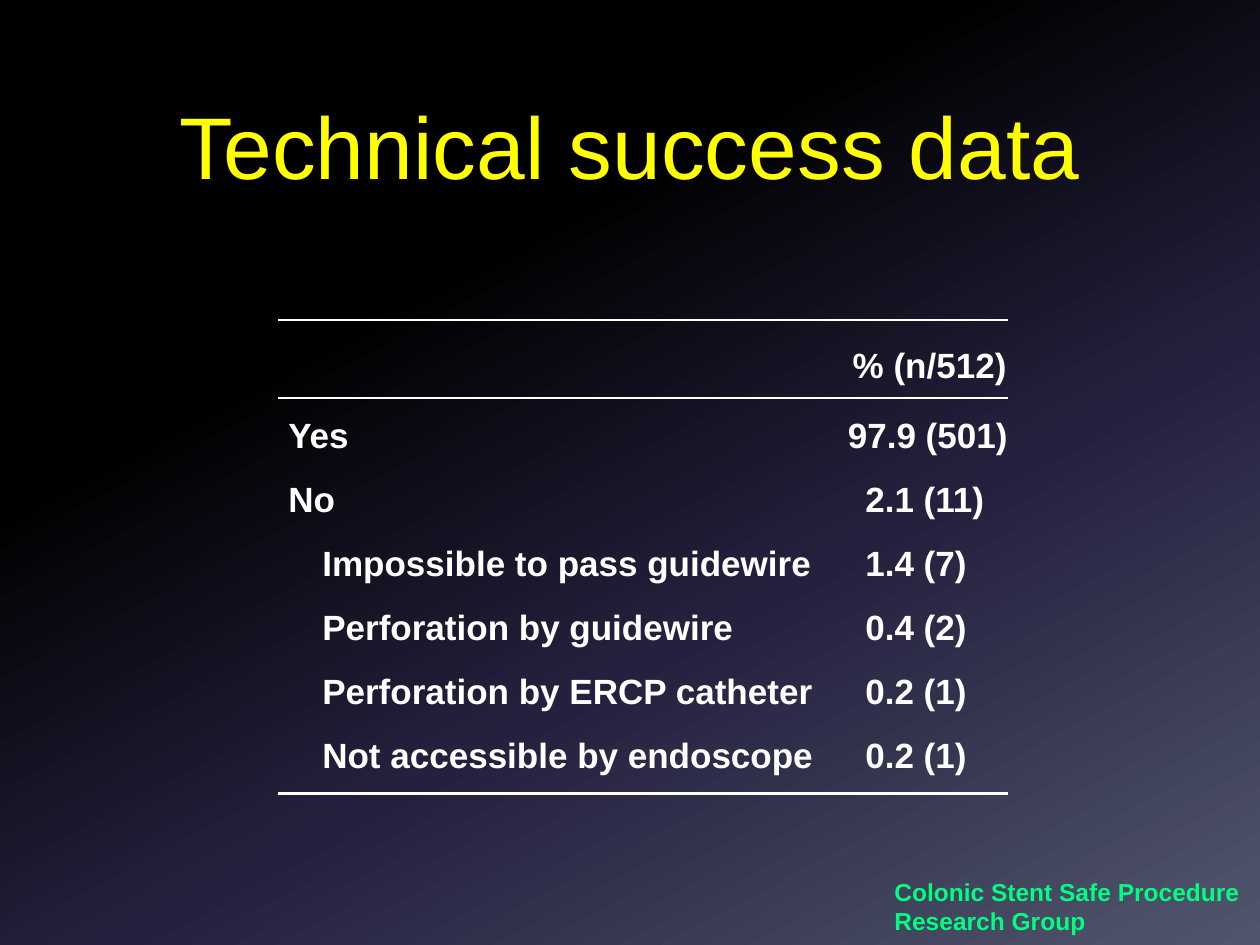
from pptx import Presentation
from pptx.dml.color import RGBColor
from pptx.enum.shapes import MSO_CONNECTOR as Connector
from pptx.enum.text import MSO_ANCHOR as Anchor, MSO_AUTO_SIZE as AutoSize, PP_ALIGN as Align
from pptx.oxml import parse_xml
from pptx.oxml.ns import nsdecls, qn
from pptx.util import Pt
from lxml import etree

BLACK = RGBColor(0x00, 0x00, 0x00)
NAVY = RGBColor(0x24, 0x21, 0x3E)
SLATE = RGBColor(0x51, 0x56, 0x6D)
WHITE = RGBColor(0xFF, 0xFF, 0xFF)
YELLOW = RGBColor(0xFF, 0xFF, 0x00)
GREEN = RGBColor(0x00, 0xFF, 0x80)

FONT = "Arial"
GRADIENT = [(0, BLACK), (31, BLACK), (62, NAVY), (100, SLATE)]
GRADIENT_ANGLE = 62

RULE_LEFT, RULE_RIGHT = 159.1, 576
RULES = [(182.9, 1.5), (227.5, 0.75), (453.6, 1.5)]

LABEL_X, INDENT_X, VALUE_X = 157.7, 177.1, 487.4
ROW_TOP, ROW_PITCH, ROW_HEIGHT = 232.6, 36.6, 31.7
ROWS = [
    ("Yes", LABEL_X, 50.4, "97.9 (501)", 477.4, 106.6),
    ("No", LABEL_X, 41.8, "2.1 (11)", VALUE_X, 82.8),
    ("Impossible to pass guidewire", INDENT_X, 295.9, "1.4 (7)", VALUE_X, 72.7),
    ("Perforation by guidewire", INDENT_X, 251.3, "0.4 (2)", VALUE_X, 72.7),
    ("Perforation by ERCP catheter", INDENT_X, 297.4, "0.2 (1)", VALUE_X, 72.7),
    ("Not accessible by endoscope", INDENT_X, 297.4, "0.2 (1)", VALUE_X, 72.7),
]


def set_background(s):
    fill = s.background.fill
    fill.gradient()
    grad = s.element.find(".//" + qn("a:gradFill"))
    stops = "".join(
        f'<a:gs pos="{pos * 1000}"><a:srgbClr val="{color}"/></a:gs>'
        for pos, color in GRADIENT
    )
    grad.replace(
        grad.find(qn("a:gsLst")),
        parse_xml(f'<a:gsLst {nsdecls("a")}>{stops}</a:gsLst>'),
    )
    lin = grad.find(qn("a:lin"))
    lin.set("ang", str(GRADIENT_ANGLE * 60000))
    lin.set("scaled", "0")


def add_text(s, lines, x, y, w, h, size, color, bold=True):
    tf = s.shapes.add_textbox(Pt(x), Pt(y), Pt(w), Pt(h)).text_frame
    tf.text = "\n".join(lines)
    tf.word_wrap = False
    tf.auto_size = AutoSize.SHAPE_TO_FIT_TEXT
    for p in tf.paragraphs:
        p.font.name = FONT
        p.font.size = Pt(size)
        p.font.bold = bold
        p.font.color.rgb = color
    return tf


def add_title(s, text):
    tf = add_text(s, [text], 36, 44.6, 648, 90, 50, YELLOW, bold=False)
    tf.word_wrap = True
    tf.auto_size = AutoSize.NONE
    tf.vertical_anchor = Anchor.TOP
    tf.margin_top = Pt(8)
    tf.paragraphs[0].alignment = Align.CENTER


def add_rule(s, y, width):
    line = s.shapes.add_connector(
        Connector.STRAIGHT, Pt(RULE_LEFT), Pt(y), Pt(RULE_RIGHT), Pt(y)
    )
    line.line.color.rgb = WHITE
    line.line.width = Pt(width)
    etree.SubElement(line._element.spPr, qn("a:effectLst"))


def add_cell(s, text, x, y, w):
    add_text(s, [text], x, y, w, ROW_HEIGHT, 20, WHITE)


def main():
    prs = Presentation()
    prs.slide_width, prs.slide_height = Pt(720), Pt(540)
    s = prs.slides.add_slide(prs.slide_layouts[6])
    set_background(s)
    add_text(s, ["Colonic Stent Safe Procedure", "Research Group"],
             504, 497.5, 213.8, 41, 14, GREEN)
    add_title(s, "Technical success data")
    for y, width in RULES:
        add_rule(s, y, width)
    add_cell(s, "% (n/512)", 480.2, 193, 103)
    for i, (label, label_x, label_w, value, value_x, value_w) in enumerate(ROWS):
        y = ROW_TOP + i * ROW_PITCH
        add_cell(s, label, label_x, y, label_w)
        add_cell(s, value, value_x, y, value_w)
    prs.save("out.pptx")


if __name__ == "__main__":
    main()
